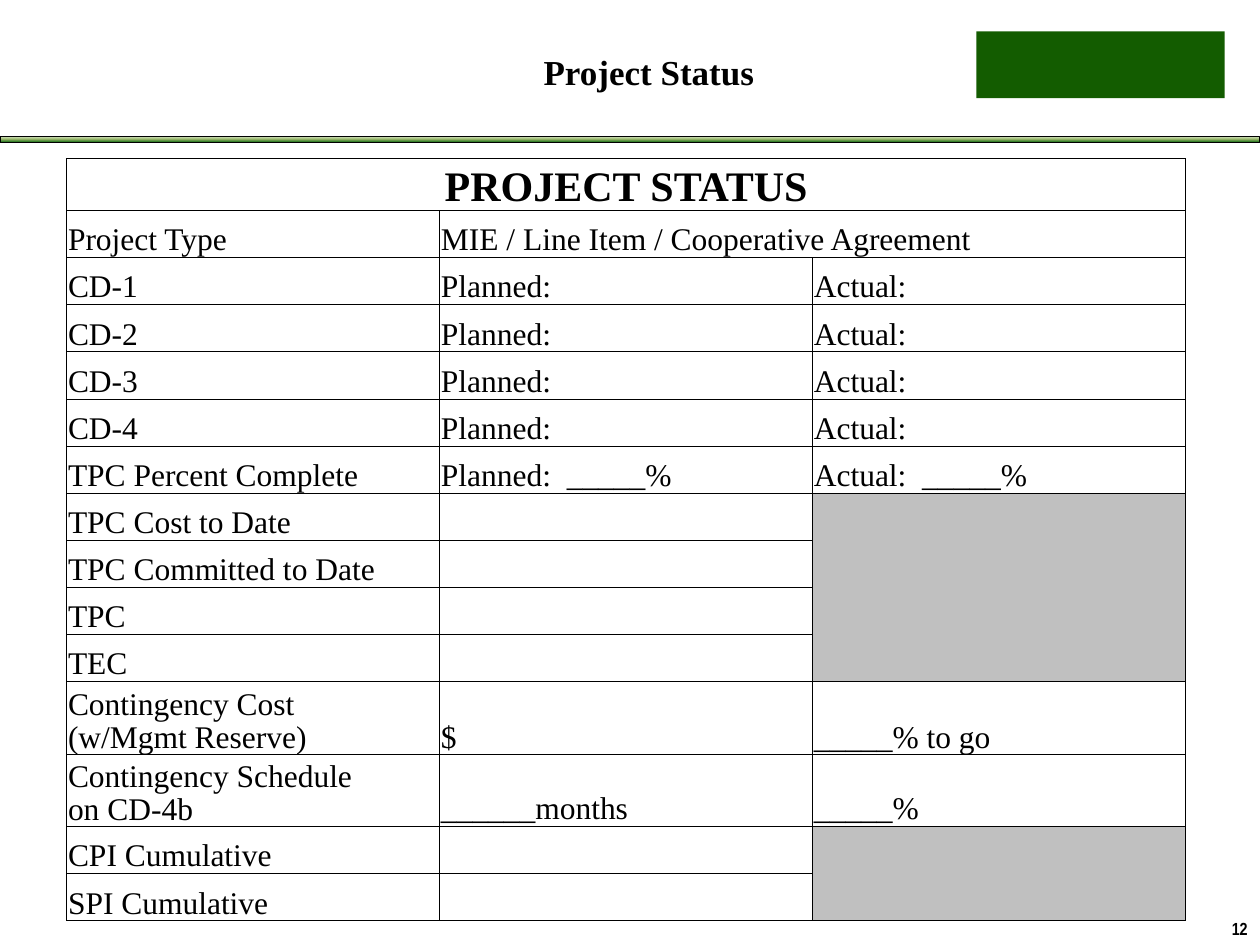
"""Build the Project Status slide with its milestone, cost and schedule table."""
from copy import deepcopy

from lxml.etree import SubElement
from pptx import Presentation
from pptx.dml.color import RGBColor
from pptx.enum.shapes import MSO_SHAPE as Shape
from pptx.enum.text import MSO_ANCHOR as Anchor, PP_ALIGN as Align
from pptx.oxml.ns import qn
from pptx.util import Inches, Pt

BLACK = RGBColor(0x00, 0x00, 0x00)
GREEN = RGBColor(0x13, 0x5C, 0x00)
GREY = RGBColor(0xC0, 0xC0, 0xC0)
BAR_COLOURS = [RGBColor(0xDD, 0xEB, 0xCF), RGBColor(0x9C, 0xB8, 0x6E), RGBColor(0x15, 0x6B, 0x13)]
SERIF = "Times New Roman"

ROWS = [
    ("PROJECT STATUS", "", ""),
    ("Project Type", "MIE / Line Item / Cooperative Agreement", ""),
    *[(f"CD-{number}", "Planned:", "Actual:") for number in range(1, 5)],
    ("TPC Percent Complete", "Planned:  _____%", "Actual:  _____%"),
    ("TPC Cost to Date", "", ""),
    ("TPC Committed to Date", "", ""),
    ("TPC", "", ""),
    ("TEC", "", ""),
    ("Contingency Cost\v(w/Mgmt Reserve)", "$", "_____% to go"),
    ("Contingency Schedule\non CD-4b", "______months", "_____%"),
    ("CPI Cumulative", "", ""),
    ("SPI Cumulative", "", ""),
]
MERGES = [((0, 0), (0, 2)), ((1, 1), (1, 2)), ((7, 2), (10, 2)), ((13, 2), (14, 2))]
GREY_CELLS = [(7, 2), (13, 2)]
TABLE_LEFT, TABLE_TOP, TABLE_WIDTH, TABLE_HEIGHT = 0.53, 1.26, 8.88, 6.05
SPECIAL_HEIGHTS = {0: 0.41, 11: 0.58, 12: 0.57}


def style(font, name, size, bold=False):
    font.name, font.size, font.bold = name, Pt(size), bold
    font.color.rgb = BLACK


def add_bar(page):
    bar = page.shapes.add_shape(Shape.RECTANGLE, 0, Inches(1.08), Inches(10), Inches(0.05))
    bar.shadow.inherit = False
    bar.line.color.rgb = BLACK
    bar.line.width = Pt(0.5)
    bar.fill.gradient()
    bar.fill.gradient_angle = 270
    stops = next(bar._element.iter(qn("a:gsLst")))
    stops.insert(1, deepcopy(stops[0]))
    for index, (stop, colour) in enumerate(zip(bar.fill.gradient_stops, BAR_COLOURS)):
        stop.position = index / 2
        stop.color.rgb = colour


def add_corner_block(page):
    block = page.shapes.add_shape(Shape.RECTANGLE, *map(Inches, (7.75, 0.25, 1.97, 0.53)))
    block.shadow.inherit = False
    block.fill.solid()
    block.fill.fore_color.rgb = GREEN
    block.line.fill.background()


def add_page_number(page, text):
    box = page.shapes.add_textbox(*map(Inches, (9.59, 7.24, 0.41, 0.26)))
    box.text_frame.word_wrap = True
    box.text_frame.text = text
    para = box.text_frame.paragraphs[0]
    para.alignment = Align.RIGHT
    style(para.font, "Arial Narrow", 10, bold=True)


def add_title(page, text):
    title = page.shapes.title
    title.left, title.top, title.width, title.height = map(Inches, (2.82, 0.17, 4.66, 0.97))
    frame = title.text_frame
    frame.text = text
    frame.vertical_anchor = Anchor.MIDDLE
    frame.margin_top, frame.margin_bottom = 0, Inches(0.18)
    para = frame.paragraphs[0]
    para.alignment = Align.CENTER
    style(para.font, SERIF, 20, bold=True)


def add_borders(cell):
    properties = cell._tc.get_or_add_tcPr()
    for side in ("lnL", "lnR", "lnT", "lnB"):
        line = SubElement(properties, qn(f"a:{side}"), w=str(Pt(0.5)))
        fill = SubElement(line, qn("a:solidFill"))
        SubElement(fill, qn("a:srgbClr"), val=str(BLACK))


def fill_cell(cell, text, heading, grey):
    add_borders(cell)
    if grey:
        cell.fill.solid()
        cell.fill.fore_color.rgb = GREY
    else:
        cell.fill.background()
    cell.margin_left = cell.margin_right = cell.margin_top = Inches(0.01)
    cell.margin_bottom = 0
    cell.vertical_anchor = Anchor.BOTTOM
    cell.text = text
    two_lines = len(text.splitlines()) > 1
    for para in cell.text_frame.paragraphs:
        para.alignment = Align.CENTER if heading else Align.LEFT
        para.line_spacing = 0.93 if two_lines else None
        style(para.font, SERIF, 24 if heading else 18, bold=heading)


def add_status_table(page):
    place = map(Inches, (TABLE_LEFT, TABLE_TOP, TABLE_WIDTH, TABLE_HEIGHT))
    table = page.shapes.add_table(len(ROWS), 3, *place).table
    table.first_row = table.horz_banding = False
    for column in table.columns:
        column.width = Inches(TABLE_WIDTH / 3)
    spare = TABLE_HEIGHT - sum(SPECIAL_HEIGHTS.values())
    plain_height = spare / (len(ROWS) - len(SPECIAL_HEIGHTS))
    for index, texts in enumerate(ROWS):
        table.rows[index].height = Inches(SPECIAL_HEIGHTS.get(index, plain_height))
        for column, text in enumerate(texts):
            fill_cell(table.cell(index, column), text, index == 0, (index, column) in GREY_CELLS)
    for first, last in MERGES:
        table.cell(*first).merge(table.cell(*last))


def main():
    deck = Presentation()
    deck.slide_width, deck.slide_height = Inches(10), Inches(7.5)
    page = deck.slides.add_slide(deck.slide_layouts[5])
    add_bar(page)
    add_corner_block(page)
    add_page_number(page, "12")
    add_title(page, "Project Status")
    add_status_table(page)
    deck.save("out.pptx")


if __name__ == "__main__":
    main()
